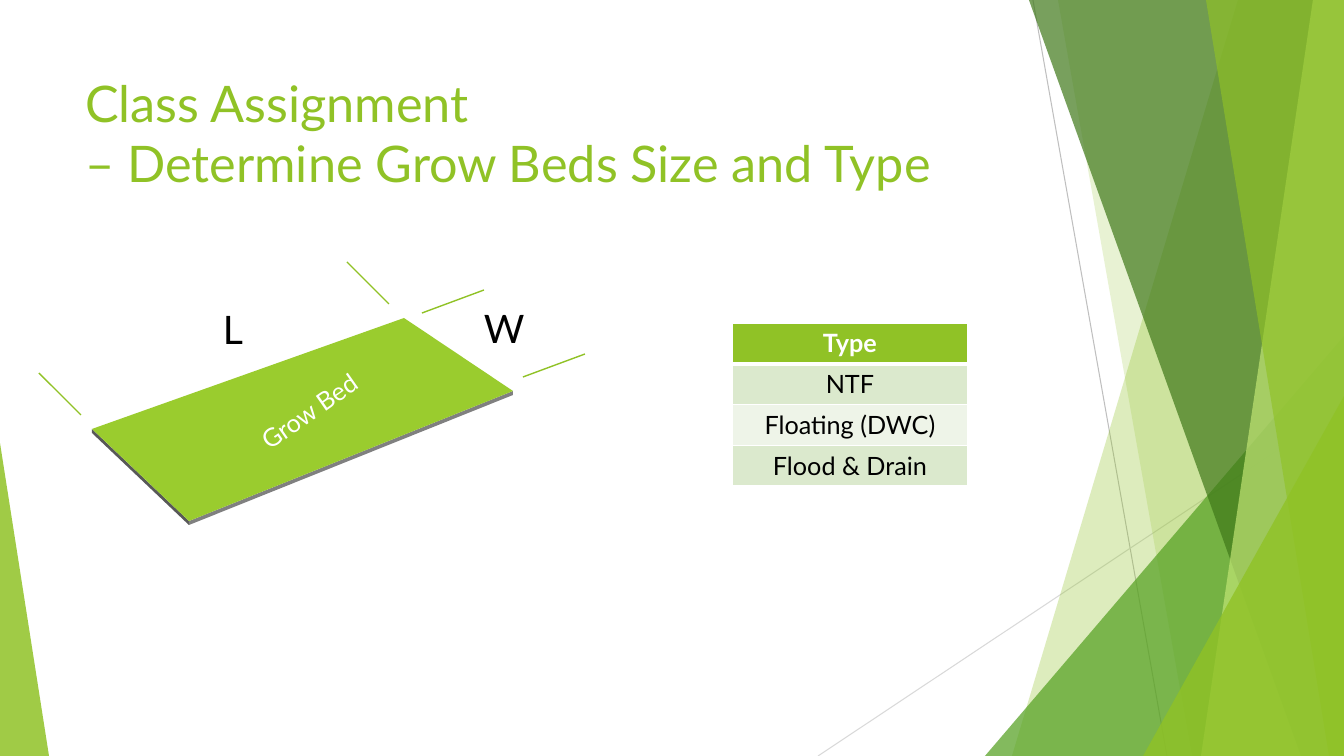
import pptx
import pptx.util
import pptx.dml.color
import pptx.enum.shapes
import pptx.enum.text
import pptx.oxml
import pptx.oxml.ns
from lxml import etree

RGB = pptx.dml.color.RGBColor
GREEN = RGB(0x90, 0xC2, 0x26)
LIME = RGB(0xC0, 0xE4, 0x74)
LEAF = RGB(0x54, 0xA0, 0x21)
FOREST = RGB(0x3F, 0x78, 0x19)
BED_TOP = RGB(0x9A, 0xCC, 0x2E)
BED_LEFT = RGB(0x58, 0x58, 0x58)
BED_FRONT = RGB(0x80, 0x80, 0x80)
BAND_DARK = RGB(0xDB, 0xE9, 0xCD)
BAND_LIGHT = RGB(0xEE, 0xF4, 0xE8)
GREY = RGB(0xBF, 0xBF, 0xBF)
PALE = RGB(0xD9, 0xD9, 0xD9)
BLACK = RGB(0, 0, 0)
WHITE = RGB(255, 255, 255)

WIDTH, HEIGHT = 1344, 756
SCALE = 914400 / 100.8
LEFT = pptx.enum.text.PP_ALIGN.LEFT
CENTER = pptx.enum.text.PP_ALIGN.CENTER
TOP = pptx.enum.text.MSO_ANCHOR.TOP
MIDDLE = pptx.enum.text.MSO_ANCHOR.MIDDLE
qn = pptx.oxml.ns.qn


def px(*values):
    return [pptx.util.Emu(round(v * SCALE)) for v in values]


class Deck:
    def __init__(self):
        self.font = "Lato"
        self.prs = pptx.Presentation()
        self.prs.slide_width, self.prs.slide_height = px(WIDTH, HEIGHT)
        self.s = self.prs.slides.add_slide(self.prs.slide_layouts[5])

    def set_text(self, tf, text, size, color, align=LEFT, anchor=TOP, bold=False):
        tf.word_wrap = True
        tf.vertical_anchor = anchor
        p = tf.paragraphs[0]
        p.text = text
        p.alignment = align
        style = {"name": self.font, "size": pptx.util.Pt(size), "bold": bold}
        for r in p.runs:
            for key, value in style.items():
                setattr(r.font, key, value)
            r.font.color.rgb = color

    def title(self, text, box):
        sp = self.s.shapes.title
        for key, value in zip(("left", "top", "width", "height"), px(*box)):
            setattr(sp, key, value)
        self.set_text(sp.text_frame, text, 36, GREEN)

    def text(self, text, box, size, color, rotation=0, **layout):
        sp = self.s.shapes.add_textbox(*px(*box))
        sp.rotation = rotation
        self.set_text(sp.text_frame, text, size, color, **layout)

    def paint(self, sp, color, opacity):
        sp.shadow.inherit = False
        sp.fill.solid()
        sp.fill.fore_color.rgb = color
        sp.line.fill.background()
        if opacity < 100:
            clr = sp.element.spPr.find(qn("a:solidFill")).find(qn("a:srgbClr"))
            etree.SubElement(clr, qn("a:alpha"), val=str(opacity * 1000))

    def polygon(self, points, color, opacity=100):
        fb = self.s.shapes.build_freeform(*points[0], scale=SCALE)
        fb.add_line_segments(points[1:], close=True)
        self.paint(fb.convert_to_shape(), color, opacity)

    def triangle(self, box, apex, color, opacity):
        kind = pptx.enum.shapes.MSO_SHAPE.ISOSCELES_TRIANGLE
        sp = self.s.shapes.add_shape(kind, *px(*box))
        sp.adjustments[0] = apex
        self.paint(sp, color, opacity)

    def line(self, x1, y1, x2, y2, color, width):
        kind = pptx.enum.shapes.MSO_CONNECTOR.STRAIGHT
        c = self.s.shapes.add_connector(kind, *px(x1, y1, x2, y2))
        c.line.color.rgb = color
        c.line.width = pptx.util.Pt(width)
        etree.SubElement(c._element.spPr, qn("a:effectLst"))

    def border(self, cell, header):
        tc_pr = cell._tc.get_or_add_tcPr()
        for i, side in enumerate(("lnL", "lnR", "lnT", "lnB")):
            points = 3 if header and side == "lnB" else 1
            ln = etree.Element(qn("a:" + side), w=str(int(pptx.util.Pt(points))))
            fill = etree.SubElement(ln, qn("a:solidFill"))
            etree.SubElement(fill, qn("a:srgbClr"), val=str(WHITE))
            tc_pr.insert(i, ln)

    def table(self, rows, box):
        table = self.s.shapes.add_table(len(rows), 1, *px(*box)).table
        for i, text in enumerate(rows):
            header = i == 0
            cell = table.cell(i, 0)
            cell.fill.solid()
            band = BAND_DARK if i % 2 else BAND_LIGHT
            cell.fill.fore_color.rgb = GREEN if header else band
            self.border(cell, header)
            self.set_text(cell.text_frame, text, 18, WHITE if header else BLACK,
                          align=CENTER, bold=header)


def facet(deck, top_x, bottom_x, color, opacity):
    """A band reaching from a slanted left side to the slide's right edge."""
    deck.polygon([(top_x, 0), (WIDTH, 0), (WIDTH, HEIGHT), (bottom_x, HEIGHT)],
                 color, opacity)


def main():
    deck = Deck()

    # Background facets
    deck.line(1033, 0, 1167, HEIGHT, GREY, 0.75)
    deck.line(WIDTH, 406, 818, HEIGHT, PALE, 0.75)
    facet(deck, 1238, 1012, GREEN, 30)
    facet(deck, 1058, 1192, GREEN, 20)
    deck.triangle((985, 336, 359, 420), 1, LEAF, 72)
    facet(deck, 1029, 1301, FOREST, 70)
    facet(deck, 1313, 1201, LIME, 70)
    facet(deck, 1206, 1329, GREEN, 65)
    deck.triangle((1143, 396, 201, 360), 1, GREEN, 80)
    deck.triangle((0, 443, 49, 313), 0, GREEN, 85)

    # Title
    deck.title("Class Assignment\v– Determine Grow Beds Size and Type",
               (75, 67, 948, 145))

    # Grow bed: two visible sides, then the top face
    west, north, east, south = (92, 429), (404, 318), (513, 391), (189, 521)
    for a, b, color in ((west, south, BED_LEFT), (south, east, BED_FRONT)):
        lower = [(x, y + 4) for x, y in (b, a)]
        deck.polygon([a, b, *lower], color)
    deck.polygon([west, north, east, south], BED_TOP)
    deck.text("Grow Bed", (229, 388, 160, 46), 18, WHITE, rotation=-35,
              align=CENTER, anchor=MIDDLE)

    # Dimension ticks and labels
    ticks = {(-42, -42): [(81, 415), (389, 304)],
             (62, -23): [(422, 313), (523, 377)]}
    for (dx, dy), starts in ticks.items():
        for x, y in starts:
            deck.line(x, y, x + dx, y + dy, GREEN, 1)
    deck.text("W", (474, 299, 64, 57), 28, BLACK)
    deck.text("L", (213, 300, 64, 57), 28, BLACK)

    # Bed types
    deck.table(["Type", "NTF", "Floating (DWC)", "Flood & Drain"],
               (732, 323, 236, 163))

    deck.prs.save("out.pptx")


if __name__ == "__main__":
    main()
